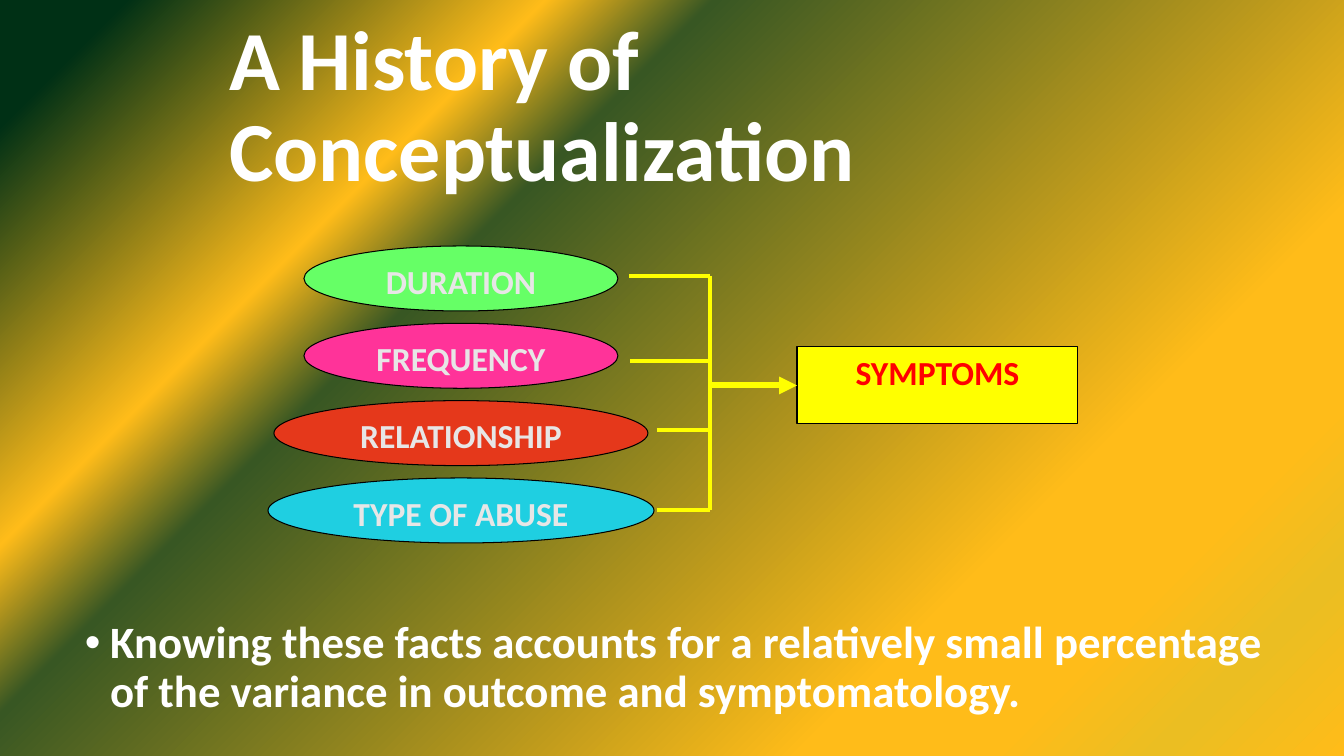
from lxml.etree import SubElement
from pptx import Presentation
from pptx.dml.color import RGBColor
from pptx.enum.shapes import MSO_CONNECTOR, MSO_SHAPE
from pptx.enum.text import MSO_ANCHOR, MSO_AUTO_SIZE, PP_ALIGN
from pptx.oxml.ns import qn
from pptx.util import Emu, Pt

WIDTH, HEIGHT = 1344, 756
SCALE = 12192000 / WIDTH

WHITE = RGBColor(0xFF, 0xFF, 0xFF)
BLACK = RGBColor(0x00, 0x00, 0x00)
PALE_GREY = RGBColor(0xE7, 0xE6, 0xE6)
YELLOW = RGBColor(0xFF, 0xFF, 0x00)
RED = RGBColor(0xFF, 0x00, 0x00)
GREEN = RGBColor(0x66, 0xFF, 0x66)
PINK = RGBColor(0xFF, 0x33, 0x99)
BRICK = RGBColor(0xE5, 0x38, 0x1B)
CYAN = RGBColor(0x1F, 0xCF, 0xE1)
DARK_GREEN = RGBColor(0x00, 0x30, 0x15)
FOREST = RGBColor(0x38, 0x57, 0x23)
AMBER = RGBColor(0xFF, 0xBC, 0x19)
GOLD = RGBColor(0xEB, 0xBE, 0x22)

BACKGROUND = [(6, DARK_GREEN), (26, AMBER), (34, FOREST), (74, AMBER),
              (83, AMBER), (91, GOLD), (100, AMBER)]
# label, fill, ellipse width
FACTORS = [("DURATION", GREEN, 314), ("FREQUENCY", PINK, 314),
           ("RELATIONSHIP", BRICK, 374), ("TYPE OF ABUSE", CYAN, 386)]
# left end, height and line width of each branch, from the top of the diagram
BRANCHES = [(364, 30, 2.5), (365, 115, 2.5), (392, 184, 2.25), (392, 264, 2.5)]


def px(n):
    return Emu(round(n * SCALE))


def set_text(shape, text, size, color, align=PP_ALIGN.LEFT,
             anchor=MSO_ANCHOR.TOP, spacing=None, before=None):
    tf = shape.text_frame
    tf.word_wrap = True
    tf.auto_size = MSO_AUTO_SIZE.NONE
    tf.vertical_anchor = anchor
    p = tf.paragraphs[0]
    p.alignment = align
    p.line_spacing = spacing
    p.space_before = before
    r = p.add_run()
    r.text = text
    r.font.name = "Calibri"
    r.font.size = Pt(size)
    r.font.bold = True
    r.font.color.rgb = color
    return p


def add_box(slide, kind, x, y, w, h, fill, text, color):
    sp = slide.shapes.add_shape(kind, px(x), px(y), px(w), px(h))
    sp.shadow.inherit = False
    sp.fill.solid()
    sp.fill.fore_color.rgb = fill
    sp.line.color.rgb = BLACK
    sp.line.width = Pt(0.75)
    set_text(sp, text, 24, color, align=PP_ALIGN.CENTER)
    return sp


def add_line(slide, x1, y1, x2, y2, width):
    line = slide.shapes.add_connector(
        MSO_CONNECTOR.STRAIGHT, px(x1), px(y1), px(x2), px(y2))
    line.line.color.rgb = YELLOW
    line.line.width = Pt(width)
    SubElement(line.element.spPr, qn("a:effectLst"))
    return line


def paint_background(slide):
    fill = slide.background.fill
    fill.gradient()
    fill.gradient_angle = 315
    stops = next(slide.element.iter(qn("a:gsLst")))
    for stop in list(stops):
        stops.remove(stop)
    for position, color in BACKGROUND:
        stop = SubElement(stops, qn("a:gs"), pos=str(position * 1000))
        SubElement(stop, qn("a:srgbClr"), val=str(color))


def add_title(slide, x, y, w, h):
    title = slide.shapes.title
    title.left, title.top, title.width, title.height = map(px, (x, y, w, h))
    set_text(title, "A History of Conceptualization", 60, WHITE,
             anchor=MSO_ANCHOR.MIDDLE, spacing=0.9)


def add_diagram(slide, x, y, w, h):
    """Factors on the left, joined by a bracket to the symptoms on the right."""
    ellipse_h, column_w = 65, 392
    pitch = (h - ellipse_h) / (len(FACTORS) - 1)
    for i, (label, fill, ellipse_w) in enumerate(FACTORS):
        add_box(slide, MSO_SHAPE.OVAL, x + (column_w - ellipse_w) / 2,
                y + i * pitch, ellipse_w, ellipse_h, fill, label, PALE_GREY)

    box_w, box_h, box_y = 281, 77, y + 101
    box_x = x + w - box_w
    symptoms = add_box(slide, MSO_SHAPE.RECTANGLE, box_x, box_y, box_w, box_h,
                       YELLOW, "SYMPTOMS", RED)

    trunk_x = x + 445
    for left, top, width in BRANCHES:
        add_line(slide, x + left, y + top, trunk_x, y + top, width)
    add_line(slide, trunk_x, y + BRANCHES[0][1],
             trunk_x, y + BRANCHES[-1][1], 2.25)

    middle = box_y + box_h / 2
    arrow = add_line(slide, trunk_x, middle, box_x, middle, 4.25)
    arrow.end_connect(symptoms, 1)
    SubElement(arrow.line._get_or_add_ln(), qn("a:tailEnd"), type="triangle")


def add_conclusion(slide, x, y, w, h):
    sp = slide.shapes.add_textbox(px(x), px(y), px(w), px(h))
    p = set_text(sp, "Knowing these facts accounts for a relatively small "
                 "percentage of the variance in outcome and symptomatology.",
                 32, WHITE, spacing=0.9, before=Pt(10))
    pPr = p._p.get_or_add_pPr()
    pPr.set("marL", "228600")
    pPr.set("indent", "-228600")
    SubElement(pPr, qn("a:buFont"), typeface="Arial")
    SubElement(pPr, qn("a:buChar"), char="•")


def main():
    prs = Presentation()
    prs.slide_width, prs.slide_height = px(WIDTH), px(HEIGHT)
    slide = prs.slides.add_slide(prs.slide_layouts[5])
    paint_background(slide)
    add_title(slide, 219, 25, 1053, 168)
    add_diagram(slide, 265, 246, 813, 297)
    add_conclusion(slide, 75, 615, 1216, 113)
    prs.save("out.pptx")


if __name__ == "__main__":
    main()
